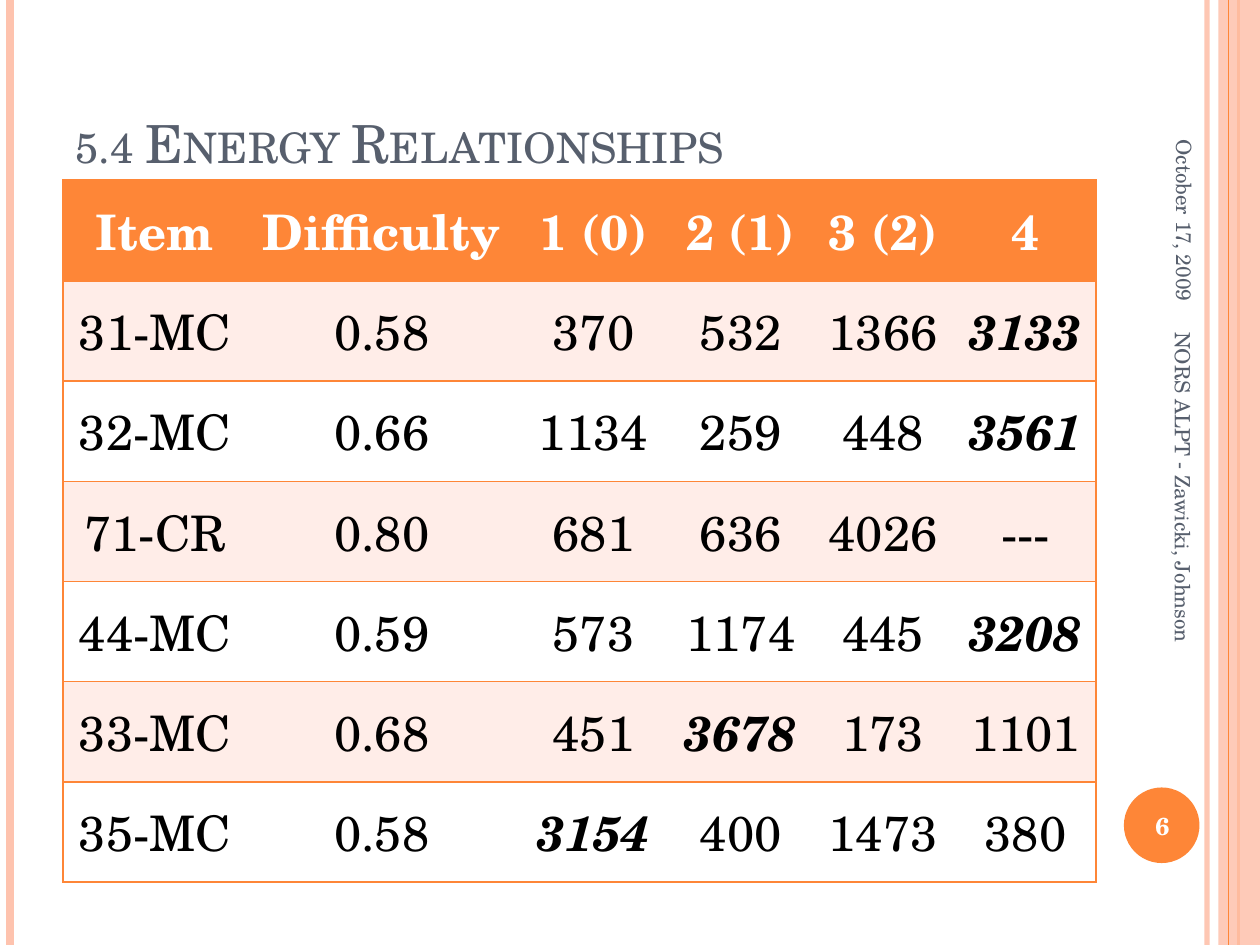
from lxml.etree import SubElement
from pptx import Presentation
from pptx.dml.color import RGBColor
from pptx.enum.shapes import MSO_CONNECTOR as Connector, MSO_SHAPE as Shape
from pptx.enum.text import MSO_ANCHOR as Anchor, PP_ALIGN as Align
from pptx.oxml.ns import qn
from pptx.util import Inches, Pt

FONT = "TeX Gyre Schola"
ORANGE, PEACH, BAND = "FE8637", "FEC3AE", "FFEDE8"
SLATE, WHITE, BLACK = "575F6D", "FFFFFF", "000000"
NO_GRID_STYLE = "{2D5ABB26-0587-4C30-8999-92F81FD0307C}"

HEADER = ["Item", "Difficulty", "1 (0)", "2 (1)", "3 (2)", "4"]
COLUMN_WIDTHS = [1.46, 2.14, 1.22, 1.12, 1.14, 1.12]
# Each item with the column of its correct answer, if that is marked
ITEMS = [
    (["31-MC", "0.58", "370", "532", "1366", "3133"], 5),
    (["32-MC", "0.66", "1134", "259", "448", "3561"], 5),
    (["71-CR", "0.80", "681", "636", "4026", "---"], None),
    (["44-MC", "0.59", "573", "1174", "445", "3208"], 5),
    (["33-MC", "0.68", "451", "3678", "173", "1101"], 3),
    (["35-MC", "0.58", "3154", "400", "1473", "380"], 2),
]


def color(hex_value):
    return RGBColor.from_string(hex_value)


def set_alpha(properties, percent):
    """Make the first solid colour inside an XML element partly transparent."""
    solid = next(properties.iter(qn("a:srgbClr")))
    SubElement(solid, qn("a:alpha"), val=str(percent * 1000))


class SlideBuilder:
    def __init__(self, slide):
        self.slide = slide

    def add_run(self, frame, text, size, hex_value, align=Align.LEFT, **font_values):
        paragraph = frame.paragraphs[0]
        paragraph.alignment = align
        run = paragraph.add_run()
        run.text = text
        run.font.color.rgb = color(hex_value)
        for name, value in {"name": FONT, "size": Pt(size), **font_values}.items():
            setattr(run.font, name, value)
        return run

    def title(self, text, left, top, width, height):
        shape = self.slide.shapes.title
        shape.left, shape.top = Inches(left), Inches(top)
        shape.width, shape.height = Inches(width), Inches(height)
        shape.text_frame.vertical_anchor = Anchor.BOTTOM
        run = self.add_run(shape.text_frame, text, 30, SLATE)
        run._r.get_or_add_rPr().set("cap", "small")

    def text(self, text, left, top, width, height, size, hex_value, rotation=0, **style):
        box = self.slide.shapes.add_textbox(
            Inches(left), Inches(top), Inches(width), Inches(height))
        box.rotation = rotation
        box.text_frame.word_wrap = True
        box.text_frame.vertical_anchor = Anchor.MIDDLE
        self.add_run(box.text_frame, text, size, hex_value, **style)

    def shape(self, kind, left, top, width, height, hex_value, alpha=100):
        shape = self.slide.shapes.add_shape(
            kind, Inches(left), Inches(top), Inches(width), Inches(height))
        shape.shadow.inherit = False
        shape.fill.solid()
        shape.fill.fore_color.rgb = color(hex_value)
        shape.line.fill.background()
        if alpha < 100:
            set_alpha(shape._element.spPr, alpha)

    def vertical_line(self, x, hex_value, weight, alpha=100):
        line = self.slide.shapes.add_connector(
            Connector.STRAIGHT, Inches(x), 0, Inches(x), Inches(7.5))
        line.line.color.rgb = color(hex_value)
        line.line.width = Pt(weight)
        if alpha < 100:
            set_alpha(line._element.spPr, alpha)
        SubElement(line._element.spPr, qn("a:effectLst"))

    def cell(self, cell, text, fill, sides, hex_value, **font_values):
        """Fill one cell; sides names the border tags to draw, in schema order."""
        cell.vertical_anchor = Anchor.MIDDLE
        for side in ("left", "right", "top", "bottom"):
            setattr(cell, f"margin_{side}", Inches(0.1))
        properties = cell._tc.get_or_add_tcPr()
        for side in sides:
            border = SubElement(properties, qn(f"a:{side}"), w=str(Pt(1)))
            solid = SubElement(border, qn("a:solidFill"))
            SubElement(solid, qn("a:srgbClr"), val=ORANGE)
        cell.fill.solid()
        cell.fill.fore_color.rgb = color(fill)
        self.add_run(cell.text_frame, text, 28, hex_value, Align.CENTER, **font_values)

    def item_table(self, left, top, height):
        row_count, last = len(ITEMS) + 1, len(HEADER) - 1
        frame = self.slide.shapes.add_table(
            row_count, len(HEADER), Inches(left), Inches(top),
            Inches(sum(COLUMN_WIDTHS)), Inches(height))
        table = frame.table
        table._tbl.tblPr.find(qn("a:tableStyleId")).text = NO_GRID_STYLE
        for column, width in zip(table.columns, COLUMN_WIDTHS):
            column.width = Inches(width)
        for row_index, (values, correct) in enumerate([(HEADER, None), *ITEMS]):
            is_header = row_index == 0
            fill = ORANGE if is_header else BAND if row_index % 2 else WHITE
            for index, value in enumerate(values):
                outer = {0: ["lnL"], last: ["lnR"]}.get(index, [])
                self.cell(table.cell(row_index, index), value, fill,
                          [*outer, "lnT", "lnB"], WHITE if is_header else BLACK,
                          bold=is_header or index == correct, italic=index == correct)


def main():
    presentation = Presentation()
    presentation.slide_width, presentation.slide_height = Inches(10), Inches(7.5)
    builder = SlideBuilder(presentation.slides.add_slide(presentation.slide_layouts[5]))

    builder.vertical_line(9.58, PEACH, 3, alpha=93)
    builder.vertical_line(0.08, PEACH, 4.5)
    builder.vertical_line(9.83, ORANGE, 1.5)
    builder.shape(Shape.RECTANGLE, 9.67, 0, 0.33, 7.5, PEACH, alpha=87)
    builder.vertical_line(9.75, ORANGE, 0.75)
    builder.shape(Shape.OVAL, 8.92, 6.25, 0.6, 0.6, ORANGE)

    builder.title("5.4 Energy Relationships", 0.5, 0.3, 9, 1.13)
    builder.item_table(0.5, 1.43, 5.56)
    builder.text("October 17, 2009", 8.3, 1.18, 2.2, 0.42, 12, SLATE,
                 rotation=90, align=Align.RIGHT)
    builder.text("6", 8.89, 6.27, 0.67, 0.57, 14, WHITE, align=Align.CENTER, bold=True)
    builder.text("NORS ALPT - Zawicki, Johnson", 7.64, 4.09, 3.5, 0.4, 12, SLATE,
                 rotation=90)
    presentation.save("out.pptx")


if __name__ == "__main__":
    main()
